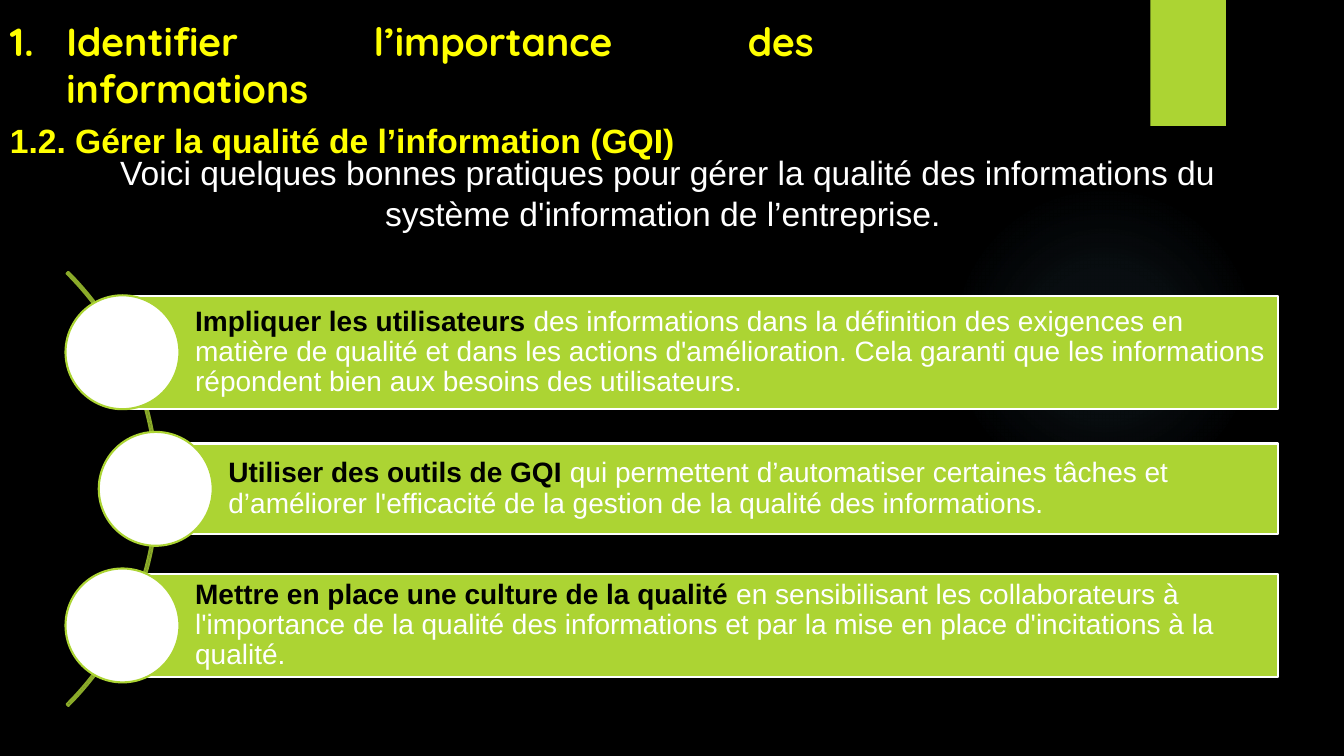
from dataclasses import dataclass
from lxml.etree import SubElement
from pptx import Presentation
from pptx.dml.color import RGBColor
from pptx.enum.shapes import MSO_SHAPE
from pptx.enum.text import MSO_ANCHOR, PP_ALIGN
from pptx.oxml import parse_xml
from pptx.oxml.ns import nsdecls, qn
from pptx.util import Inches, Pt


@dataclass(frozen=True)
class Theme:
    black: str = "000000"
    white: str = "FFFFFF"
    lime: str = "ACD433"
    olive: str = "8AAA29"
    yellow: str = "FFFF00"
    glow: str = "7AC4F0"
    face: str = "Arial"
    head: str = "Quicksand"
    title: int = 28
    lead: int = 24
    body: int = 20
    edge: float = 1.5


THEME = Theme()

ROWS = [
    (0, 1.12, "Impliquer les utilisateurs ",
     "des informations dans la définition des exigences en matière de qualité "
     "et dans les actions d'amélioration. Cela garanti que les informations "
     "répondent bien aux besoins des utilisateurs."),
    (0.33, 0.9, "Utiliser des outils de GQI ",
     "qui permettent d’automatiser certaines tâches et d’améliorer "
     "l'efficacité de la gestion de la qualité des informations."),
    (0, 1.02, "Mettre en place une culture de la qualité ",
     "en sensibilisant les collaborateurs à l'importance de la qualité des "
     "informations et par la mise en place d'incitations à la qualité."),
]


def apply(item, values):
    for name, value in values.items():
        setattr(item, name, value)


def draw(slide, kind, box, fill=None, line=None):
    shape = slide.shapes.add_shape(kind, *map(Inches, box))
    shape.shadow.inherit = False
    if fill:
        shape.fill.solid()
        shape.fill.fore_color.rgb = RGBColor.from_string(fill)
    else:
        shape.fill.background()
    if line:
        shape.line.color.rgb = RGBColor.from_string(line)
        shape.line.width = Pt(THEME.edge)
    else:
        shape.line.fill.background()
    return shape


def write(para, text, size, color, bold=False, face=THEME.face):
    run = para.add_run()
    run.text = text
    apply(run.font, {"name": face, "size": Pt(size), "bold": bold})
    run.font.color.rgb = RGBColor.from_string(color)


def frame(slide, box):
    text = slide.shapes.add_textbox(*map(Inches, box)).text_frame
    text.word_wrap = True
    return text


def add_glow(slide, box):
    shape = draw(slide, MSO_SHAPE.OVAL, box)
    stops = "".join(
        f'<a:gs pos="{spot * 1000}"><a:srgbClr val="{THEME.glow}">'
        f'<a:alpha val="{alpha * 1000}"/></a:srgbClr></a:gs>'
        for spot, alpha in [(0, 7), (36, 6), (69, 0)])
    grad = parse_xml(
        f'<a:gradFill {nsdecls("a")}><a:gsLst>{stops}</a:gsLst>'
        '<a:path path="circle"><a:fillToRect l="50000" t="50000" '
        'r="50000" b="50000"/></a:path></a:gradFill>')
    props = shape.element.spPr
    props.replace(props.find(qn("a:noFill")), grad)


def add_title(slide, box):
    text = frame(slide, box)
    first = text.paragraphs[0]
    props = first._p.get_or_add_pPr()
    indent = Inches(0.56)
    props.set("marL", str(indent))
    props.set("indent", str(-indent))
    SubElement(props, qn("a:buFont"), typeface="+mj-lt")
    SubElement(props, qn("a:buAutoNum"), type="arabicPeriod")
    first.alignment = PP_ALIGN.JUSTIFY
    write(first, "Identifier l’importance des informations",
          THEME.title, THEME.yellow, True, THEME.head)
    second = text.add_paragraph()
    apply(second, {"alignment": PP_ALIGN.JUSTIFY, "space_before": Pt(6)})
    write(second, "1.2. Gérer la qualité de l’information (GQI)",
          THEME.lead, THEME.yellow, True)


def add_lead(slide, box):
    para = frame(slide, box).paragraphs[0]
    para.alignment = PP_ALIGN.CENTER
    write(para, "Voici quelques bonnes pratiques pour gérer la qualité des "
          "informations du système d'information de l’entreprise. ",
          THEME.lead, THEME.white)


def add_arc(slide, box):
    arc = draw(slide, MSO_SHAPE.BLOCK_ARC, box, line=THEME.olive)
    for spot, value in enumerate((189, 27, 0.004)):
        arc.adjustments[spot] = value


def add_row(slide, box, disc, strong, plain):
    left, top, width, height = box
    bar = draw(slide, MSO_SHAPE.RECTANGLE, box, THEME.lime, THEME.white)
    text = bar.text_frame
    pad = Inches(0.06)
    apply(text, {"word_wrap": True, "vertical_anchor": MSO_ANCHOR.MIDDLE,
                 "margin_left": Inches(0.72), "margin_right": pad,
                 "margin_top": pad, "margin_bottom": pad})
    para = text.paragraphs[0]
    apply(para, {"alignment": PP_ALIGN.LEFT, "line_spacing": 0.9})
    write(para, strong, THEME.body, THEME.black, True)
    write(para, plain, THEME.body, THEME.white)
    spot = (left - disc / 2, top + height / 2 - disc / 2, disc, disc)
    draw(slide, MSO_SHAPE.OVAL, spot, THEME.white, THEME.lime)


def add_list(slide, box):
    left, top, width, height = box
    disc = 1.13
    step = (height - disc) / (len(ROWS) - 1)
    size = 6.09
    add_arc(slide, (left - 5.17, top + (height - size) / 2, size, size))
    for index, (shift, tall, strong, plain) in enumerate(ROWS):
        inset = disc / 2 + shift
        mid = top + disc / 2 + index * step
        bar = (left + inset, mid - tall / 2, width - inset, tall)
        add_row(slide, bar, disc, strong, plain)


def main():
    deck = Presentation()
    apply(deck, {"slide_width": Inches(13.33), "slide_height": Inches(7.5)})
    slide = deck.slides.add_slide(deck.slide_layouts[6])
    slide.background.fill.solid()
    slide.background.fill.fore_color.rgb = RGBColor.from_string(THEME.black)
    add_glow(slide, (9.41, 1.83, 3.08, 3.08))
    draw(slide, MSO_SHAPE.RECTANGLE, (11.41, 0, 0.75, 1.25), THEME.lime)
    add_title(slide, (0, 0.12, 8.17, 1.06))
    add_lead(slide, (0.81, 1.46, 11.62, 0.91))
    add_list(slide, (0.65, 2.93, 12.03, 3.84))
    deck.save("out.pptx")


if __name__ == "__main__":
    main()
